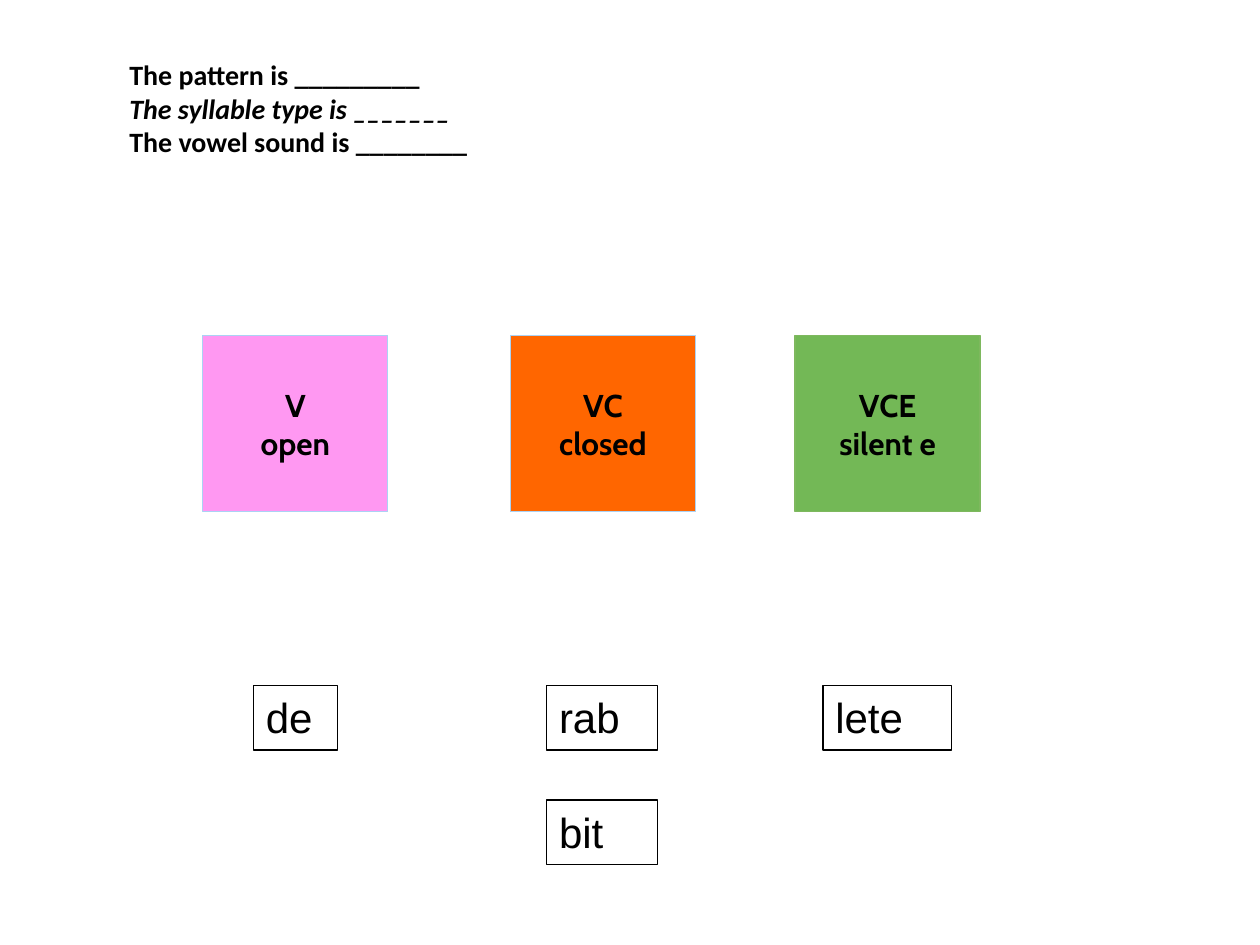
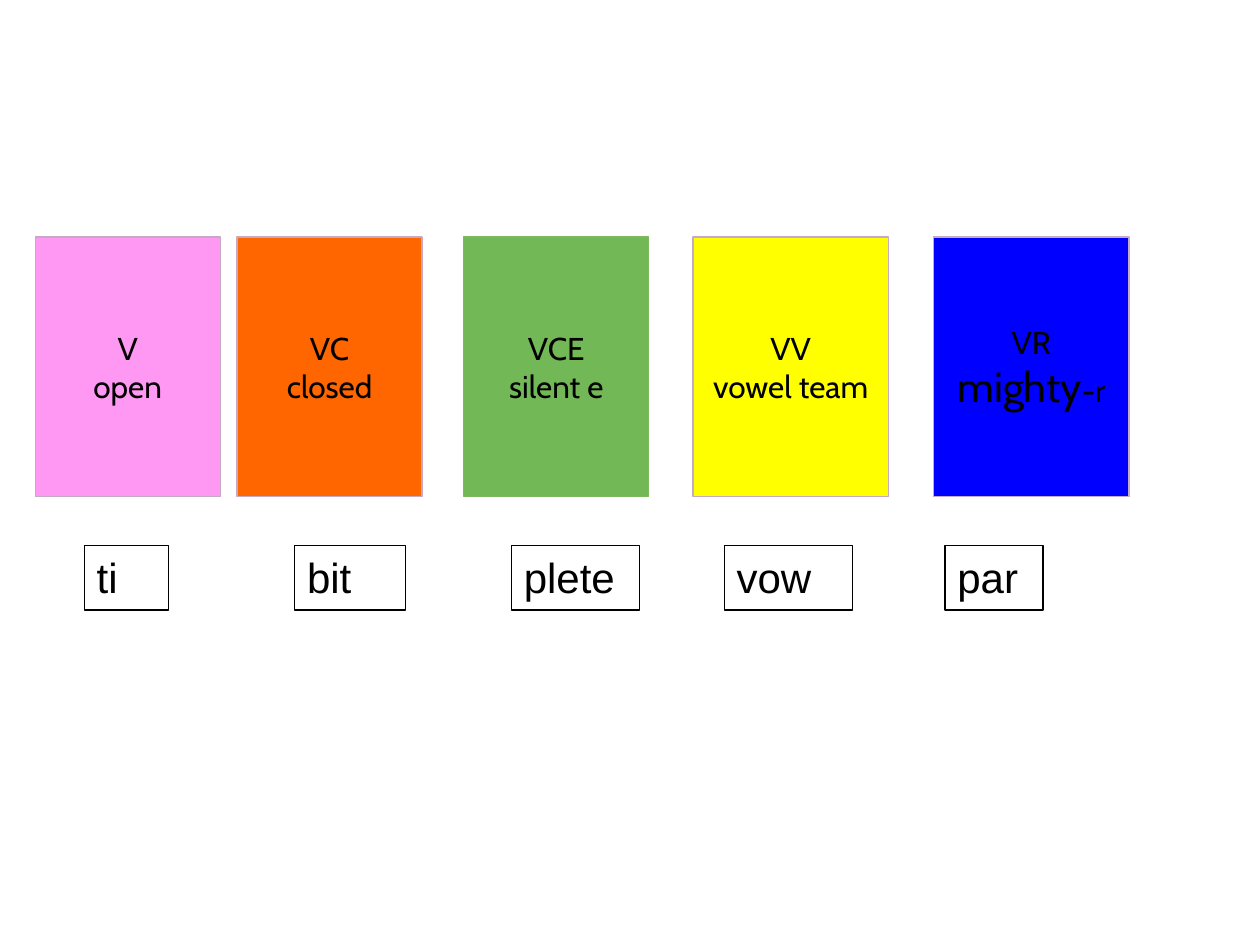
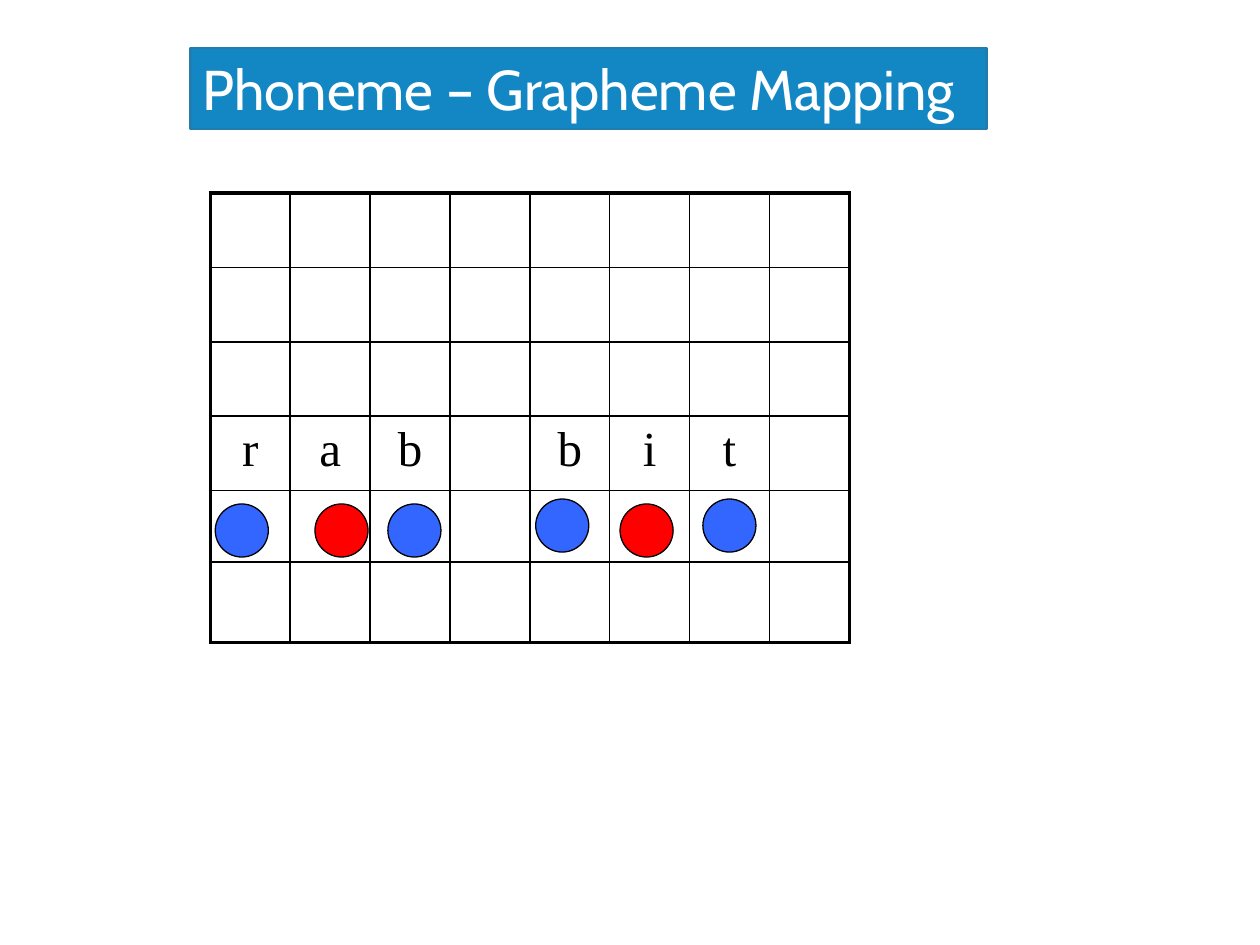
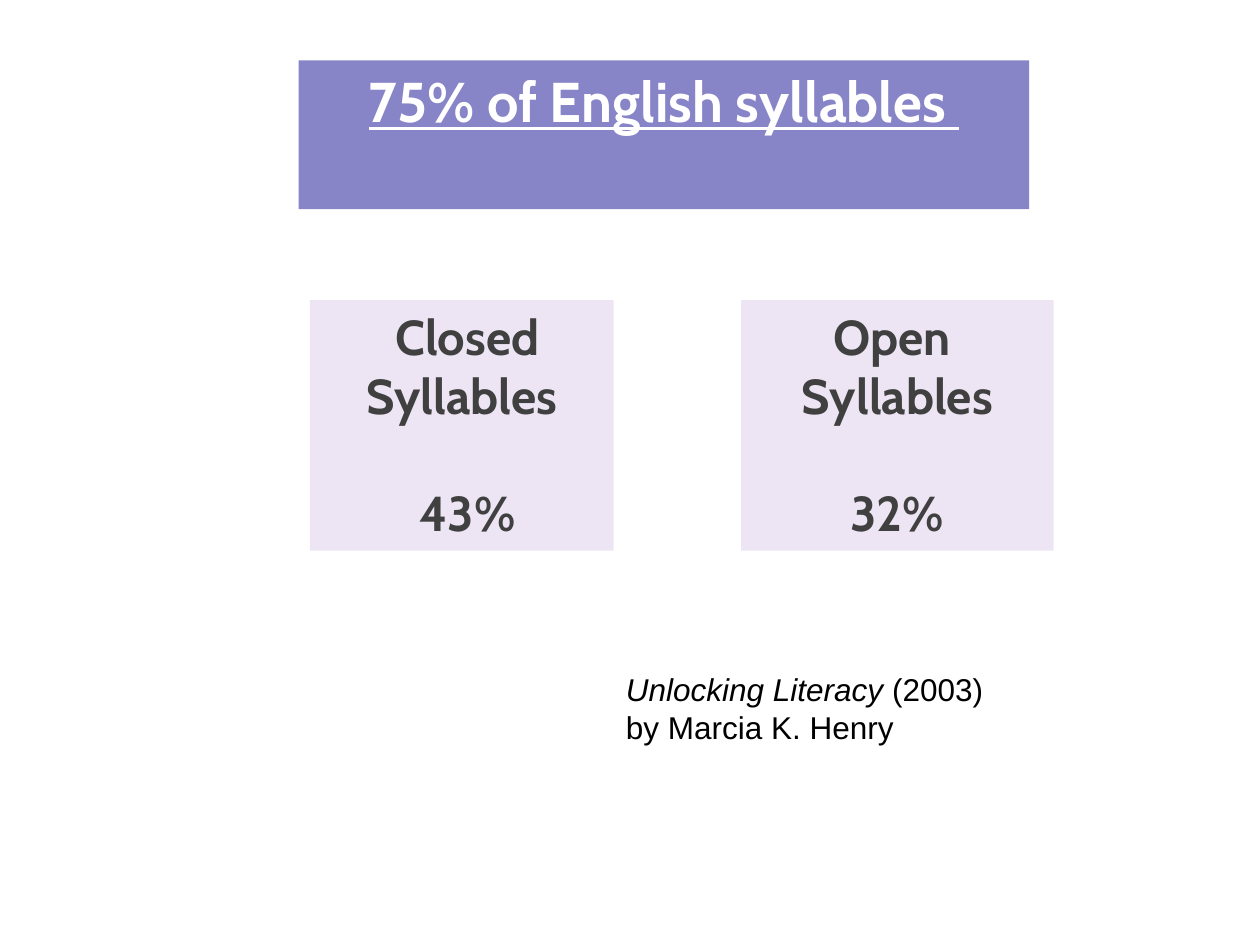
from pptx import Presentation
from pptx.util import Cm, Pt
from pptx.dml.color import RGBColor as Color
from pptx.enum.shapes import MSO_SHAPE as Shape
from pptx.enum.text import PP_ALIGN as Align, MSO_ANCHOR as Anchor
from pptx.oxml.ns import qn
from lxml.etree import Element, SubElement

BLACK = Color(0, 0, 0)
WHITE = Color(255, 255, 255)
GREY = Color(0x40, 0x40, 0x40)
PINK = Color(0xFF, 0x98, 0xF2)
ORANGE = Color(0xFF, 0x66, 0x00)
GREEN = Color(0x73, 0xB8, 0x56)
LEAF = Color(0x7E, 0xB8, 0x5E)
YELLOW = Color(0xFF, 0xFF, 0x00)
BLUE = Color(0x00, 0x00, 0xFF)
SKY = Color(0xAB, 0xD2, 0xF4)
MAUVE = Color(0xC6, 0xAA, 0xC5)
RED = Color(0xFF, 0x00, 0x00)
AZURE = Color(0x33, 0x66, 0xFF)
TEAL = Color(0x12, 0x87, 0xC3)
EDGE = Color(0x20, 0x7D, 0xAD)
LILAC = Color(0xED, 0xE5, 0xF3)
VIOLET = Color(0x87, 0x84, 0xC7)

HEAD, BODY, NOTE, GRID = "Cabin", "Arial", "Calibri", "Times New Roman"


def style(run, font, size, color, bold=False, italic=False, line=False):
    face = run.font
    face.name, face.size = font, Pt(size)
    face.color.rgb = color
    face.bold, face.italic, face.underline = bold, italic, line


def write(frame, paras, font, size, color, align=Align.LEFT, anchor=Anchor.TOP,
          bold=False):
    frame.word_wrap = True
    frame.vertical_anchor = anchor
    for i, runs in enumerate(paras):
        para = frame.paragraphs[0] if i == 0 else frame.add_paragraph()
        para.alignment = align
        for item in [runs] if isinstance(runs, str) else runs:
            text, extra = (item, {}) if isinstance(item, str) else item
            run = para.add_run()
            run.text = text
            style(run, **{"font": font, "size": size, "color": color,
                          "bold": bold, **extra})


def block(slide, box, fill=None, edge=None, width=0.75, kind=Shape.RECTANGLE):
    shape = slide.shapes.add_shape(kind, *map(Cm, box))
    shape.shadow.inherit = False
    if fill is None:
        shape.fill.background()
    else:
        shape.fill.solid()
        shape.fill.fore_color.rgb = fill
    if edge is None:
        shape.line.fill.background()
    else:
        shape.line.color.rgb = edge
        shape.line.width = Pt(width)
    return shape


def label(slide, box, paras, font, size):
    area = slide.shapes.add_textbox(*map(Cm, box))
    write(area.text_frame, paras, font, size, BLACK)


def cards(slide, box, items, bold=False):
    left, top, height = box
    for x, width, fill, edge, paras in items:
        card = block(slide, (left + x, top, width, height), fill, edge)
        write(card.text_frame, paras, HEAD, 18, BLACK, Align.CENTER,
              Anchor.MIDDLE, bold)


def tags(slide, box, items):
    left, top, height = box
    for x, y, width, text in items:
        tag = block(slide, (left + x, top + y, width, height), edge=BLACK)
        write(tag.text_frame, [text], BODY, 24, BLACK)


def border(cell, sides):
    props = cell._tc.get_or_add_tcPr()
    for i, (side, width) in enumerate(sides.items()):
        line = Element(qn("a:ln" + side), w=str(Pt(width)))
        fill = SubElement(line, qn("a:solidFill"))
        SubElement(fill, qn("a:srgbClr"), val=str(BLACK))
        props.insert(i, line)


def grid(slide, box, word, high):
    left, top, wide = box
    rows, cols = len(high), len(word)
    frame = slide.shapes.add_table(rows, cols, Cm(left), Cm(top),
                                   Cm(wide * cols), Cm(sum(high)))
    table = frame.table
    table.first_row = table.horz_banding = False
    for col in table.columns:
        col.width = Cm(wide)
    for r, size in enumerate(high):
        table.rows[r].height = Cm(size)
        for c in range(cols):
            cell = table.cell(r, c)
            cell.margin_left = cell.margin_right = 0
            cell.fill.background()
            ends = {"L": c == 0, "R": c == cols - 1,
                    "T": r == 0, "B": r == rows - 1}
            border(cell, {k: 2.25 if end else 1 for k, end in ends.items()})
            if r == 3 and word[c] != " ":
                write(cell.text_frame, [word[c]], GRID, 28, BLACK, Align.CENTER)


def dots(slide, box, items):
    left, top, size = box
    for x, y, fill in items:
        block(slide, (left + x, top + y, size, size), fill, BLACK,
              kind=Shape.OVAL)


def share(slide, box, paras):
    card = block(slide, box, LILAC)
    write(card.text_frame, paras, HEAD, 28, GREY, Align.CENTER, bold=True)
    card.text_frame.paragraphs[-1].space_before = Pt(33.5)


def types(slide):
    cards(slide, (4.09, 6.76, 3.56), [
        (0, 3.73, PINK, SKY, ["V", "open"]),
        (6.2, 3.73, ORANGE, SKY, ["VC", "closed"]),
        (11.94, 3.73, GREEN, LEAF, ["VCE", "silent e"]),
    ], bold=True)
    tags(slide, (5.11, 13.82, 1.3), [
        (0, 0, 1.7, "de"), (5.91, 0, 2.24, "rab"),
        (11.48, 0, 2.59, "lete"), (5.91, 2.31, 2.24, "bit"),
    ])
    bold = {"bold": True}
    label(slide, (2.36, 1.04, 11.56, 2.31), [
        [("The pattern is _________", bold)],
        [("The syllable type is _______", {"bold": True, "italic": True})],
        [("The vowel sound is ________", bold)],
    ], NOTE, 16)


def teams(slide):
    cards(slide, (0.71, 4.78, 5.23), [
        (0, 3.73, PINK, MAUVE, ["V", "open"]),
        (4.07, 3.73, ORANGE, MAUVE, ["VC", "closed"]),
        (8.64, 3.73, GREEN, LEAF, ["VCE", "silent e"]),
        (13.26, 3.94, YELLOW, MAUVE, ["VV", "vowel team"]),
        (18.11, 3.94, BLUE, MAUVE, ["VR", [("mighty", {"size": 24}), "-r"]]),
    ])
    tags(slide, (1.7, 11, 1.3), [
        (0, 0, 1.7, "ti"), (4.24, 0, 2.24, "bit"), (8.61, 0, 2.59, "plete"),
        (12.9, 0, 2.59, "vow"), (17.35, 0, 1.98, "par"),
    ])


def sounds(slide):
    grid(slide, (4.24, 3.89, 1.61), "rab bit ", [1.5] * 4 + [1.44, 1.62])
    dots(slide, (4.24, 10.06, 1.07), [
        (2.11, 0.1, RED), (0.1, 0.1, AZURE), (3.58, 0.1, AZURE),
        (6.56, 0, AZURE), (8.26, 0.1, RED), (9.93, 0, AZURE),
    ])
    band = block(slide, (3.84, 0.97, 16.05, 1.63), TEAL, EDGE, 1.25)
    write(band.text_frame, ["Phoneme – Grapheme Mapping"], HEAD, 32, WHITE)


def shares(slide):
    share(slide, (6.25, 6.05, 6.12, 5.05), [" Closed Syllables", " 43%"])
    share(slide, (14.94, 6.05, 6.3, 5.05), ["Open ", "Syllables", "32%"])
    band = block(slide, (6.02, 1.22, 14.73, 3), VIOLET)
    write(band.text_frame, [[("75% of English syllables ", {"line": True})]],
          HEAD, 32, WHITE, Align.CENTER, bold=True)
    label(slide, (12.37, 13.39, 9.45, 1.8), [
        [("Unlocking Literacy ", {"italic": True}), "(2003)"],
        "by Marcia K. Henry",
    ], BODY, 18)


def main():
    deck = Presentation()
    deck.slide_width, deck.slide_height = Cm(25.4), Cm(19.05)
    for build in (types, teams, sounds, shares):
        build(deck.slides.add_slide(deck.slide_layouts[6]))
    deck.save("out.pptx")


if __name__ == "__main__":
    main()
